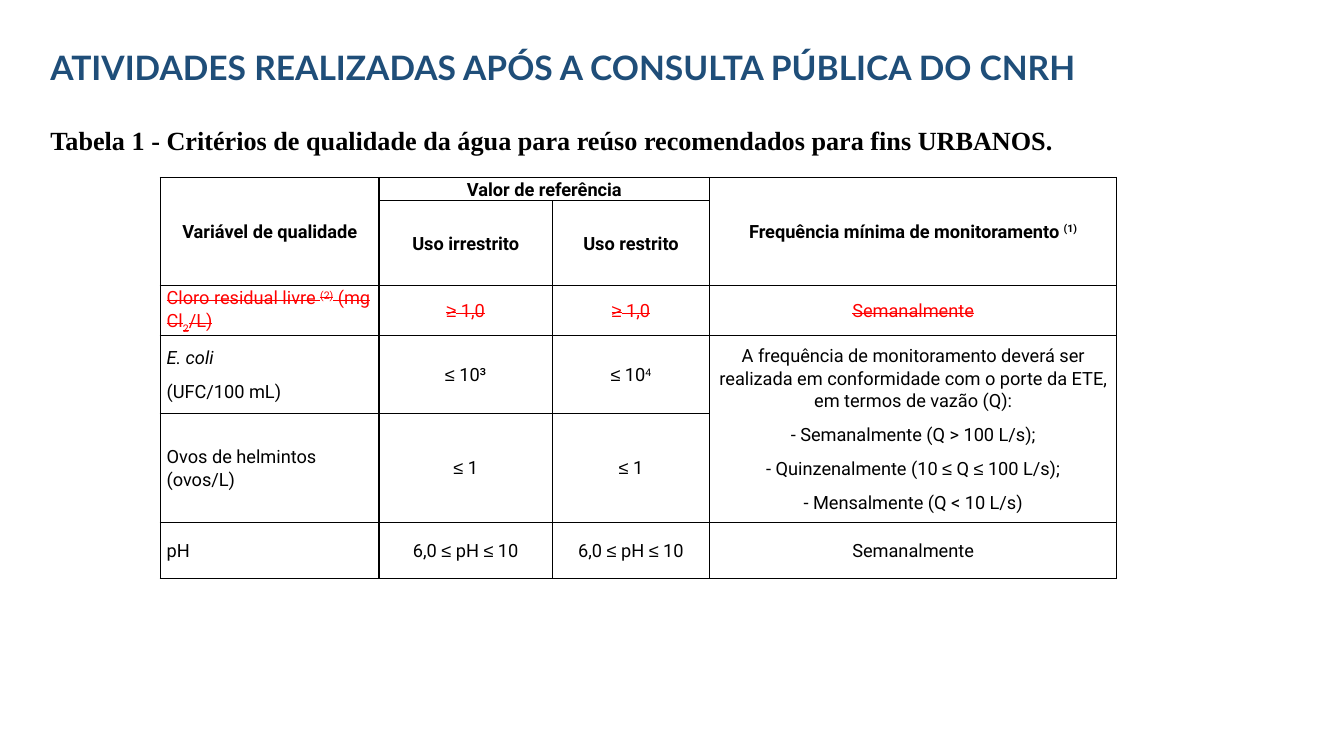
"""Build the slide with the water reuse quality criteria for urban purposes."""
from dataclasses import dataclass
from itertools import groupby
from typing import Any

from lxml import etree
from pptx import Presentation
from pptx.dml.color import RGBColor
from pptx.enum.text import MSO_ANCHOR, MSO_AUTO_SIZE, PP_ALIGN
from pptx.oxml.ns import qn
from pptx.util import Cm, Pt

LEFT, CENTER, JUSTIFY = PP_ALIGN.LEFT, PP_ALIGN.CENTER, PP_ALIGN.JUSTIFY
MIDDLE = MSO_ANCHOR.MIDDLE
FIT_SHAPE = MSO_AUTO_SIZE.SHAPE_TO_FIT_TEXT


@dataclass(frozen=True)
class Theme:
    title_color: str = "1F4E79"
    text_color: str = "000000"
    removed_color: str = "FF0000"
    title_font: str = "Lato"
    caption_font: str = "Times New Roman"
    table_font: str = "Roboto"
    symbol_font: str = "Arial"
    title_size: float = 24
    caption_size: float = 18.7
    table_size: float = 13
    border_width: float = 1


@dataclass(frozen=True)
class Piece:
    text: str
    baseline: int = 0
    italic: bool = False


@dataclass(frozen=True)
class Entry:
    row: int
    column: int
    paragraphs: list[list[Piece]]
    bold: bool = False
    removed: bool = False
    row_span: int = 1
    column_span: int = 1


@dataclass(frozen=True)
class Heading:
    text: str
    top: float
    width: float
    height: float
    font: dict[str, Any]
    color: str
    paragraph: dict[str, Any]


THEME = Theme()
SYMBOLS = "≤≥"
HEADING_LEFT = 1.02
TABLE_LEFT, TABLE_TOP = 4.04, 4.47
COLUMN_WIDTHS = [5.51, 4.37, 3.96, 10.26]
ROW_HEIGHTS = [0.58, 2.13, 1.27, 1.96, 2.74, 1.42]
CELL_FORMAT = {
    "margin_left": Cm(0.16), "margin_right": Cm(0.16),
    "margin_top": 0, "margin_bottom": 0, "vertical_anchor": MIDDLE,
}
TABLE_FLAGS = {"first_row": False, "horz_banding": False}

HEADINGS = [
    Heading("Tabela 1 - Critérios de qualidade da água para reúso recomendados para fins URBANOS.",
            2.95, 32, 1.07,
            {"name": THEME.caption_font, "size": Pt(THEME.caption_size), "bold": True},
            THEME.text_color,
            {"alignment": JUSTIFY, "line_spacing": 1.07, "space_after": Pt(10.7)}),
    Heading("ATIVIDADES REALIZADAS APÓS A CONSULTA PÚBLICA DO CNRH",
            1.07, 27.81, 1.27,
            {"name": THEME.title_font, "size": Pt(THEME.title_size), "bold": True},
            THEME.title_color, {"alignment": LEFT}),
]


def plain(*lines: str) -> list[list[Piece]]:
    """Turn each line into a paragraph of one piece."""
    return [[Piece(line)] for line in lines]


FREQUENCY_RULES = plain(
    "A frequência de monitoramento deverá ser realizada em conformidade com o porte da ETE, "
    "em termos de vazão (Q):",
    "- Semanalmente (Q > 100 L/s);",
    "- Quinzenalmente (10 ≤ Q ≤ 100 L/s);",
    "- Mensalmente (Q < 10 L/s)",
)
CHLORINE = [[Piece("Cloro residual livre "), Piece("(2)", 30), Piece(" (mg Cl"),
             Piece("2", -25), Piece("/L)")]]
ENTRIES = [
    Entry(0, 0, plain("Variável de qualidade"), bold=True, row_span=2),
    Entry(0, 1, plain("Valor de referência"), bold=True, column_span=2),
    Entry(0, 3, [[Piece("Frequência mínima de monitoramento "), Piece("(1)", 30)]],
          bold=True, row_span=2),
    Entry(1, 1, plain("Uso irrestrito"), bold=True),
    Entry(1, 2, plain("Uso restrito"), bold=True),
    Entry(2, 0, CHLORINE, removed=True),
    Entry(2, 1, plain("≥ 1,0"), removed=True),
    Entry(2, 2, plain("≥ 1,0"), removed=True),
    Entry(2, 3, plain("Semanalmente"), removed=True),
    Entry(3, 0, [[Piece("E. coli", italic=True)], [Piece("(UFC/100 mL)")]]),
    Entry(3, 1, plain("≤ 10³")),
    Entry(3, 2, [[Piece("≤ 10"), Piece("4", 30)]]),
    Entry(3, 3, FREQUENCY_RULES, row_span=2),
    Entry(4, 0, plain("Ovos de helmintos (ovos/L)")),
    Entry(4, 1, plain("≤ 1")),
    Entry(4, 2, plain("≤ 1")),
    Entry(5, 0, plain("pH")),
    Entry(5, 1, plain("6,0 ≤ pH ≤ 10")),
    Entry(5, 2, plain("6,0 ≤ pH ≤ 10")),
    Entry(5, 3, plain("Semanalmente")),
]


def apply_format(target: Any, values: dict[str, Any]) -> None:
    """Set every attribute named in the format values."""
    for name, value in values.items():
        setattr(target, name, value)


def add_run(paragraph: Any, text: str, font: dict[str, Any], color: str) -> Any:
    """Append a formatted run to a paragraph."""
    run = paragraph.add_run()
    run.text = text
    apply_format(run.font, font)
    run.font.color.rgb = RGBColor.from_string(color)
    return run


def add_heading(slide: Any, heading: Heading) -> None:
    """Draw one line of text above the table."""
    shape = slide.shapes.add_textbox(
        Cm(HEADING_LEFT), Cm(heading.top), Cm(heading.width), Cm(heading.height))
    apply_format(shape.text_frame, {"word_wrap": True, "auto_size": FIT_SHAPE})
    paragraph = shape.text_frame.paragraphs[0]
    apply_format(paragraph, heading.paragraph)
    add_run(paragraph, heading.text, heading.font, heading.color)


def add_piece(paragraph: Any, piece: Piece, entry: Entry) -> None:
    """Write a piece of cell text, giving comparison signs their own font."""
    color = THEME.removed_color if entry.removed else THEME.text_color
    for is_symbol, characters in groupby(piece.text, lambda character: character in SYMBOLS):
        font = {"name": THEME.symbol_font if is_symbol else THEME.table_font,
                "size": Pt(THEME.table_size), "bold": entry.bold, "italic": piece.italic}
        run = add_run(paragraph, "".join(characters), font, color)
        properties = run._r.get_or_add_rPr()
        if entry.removed:
            properties.set("strike", "sngStrike")
        if piece.baseline:
            properties.set("baseline", str(piece.baseline * 1000))


def style_cell(cell: Any) -> None:
    """Give a cell its margins, empty fill and four borders."""
    apply_format(cell, CELL_FORMAT)
    cell.fill.background()
    properties = cell._tc.get_or_add_tcPr()
    for position, side in enumerate(("lnL", "lnR", "lnT", "lnB")):
        line = etree.Element(qn(f"a:{side}"), w=str(Pt(THEME.border_width)))
        fill = etree.SubElement(line, qn("a:solidFill"))
        etree.SubElement(fill, qn("a:srgbClr"), val=THEME.text_color)
        properties.insert(position, line)


def fill_entry(table: Any, entry: Entry) -> None:
    """Merge the cells of an entry and write its paragraphs."""
    cell = table.cell(entry.row, entry.column)
    if entry.row_span > 1 or entry.column_span > 1:
        cell.merge(table.cell(entry.row + entry.row_span - 1,
                              entry.column + entry.column_span - 1))
    is_label = entry.column == 0 and not entry.bold
    for index, pieces in enumerate(entry.paragraphs):
        frame = cell.text_frame
        paragraph = frame.add_paragraph() if index else frame.paragraphs[0]
        apply_format(paragraph, {"alignment": LEFT if is_label else CENTER,
                                 "line_spacing": 1.07, "space_after": Pt(8)})
        for piece in pieces:
            add_piece(paragraph, piece, entry)


def add_criteria_table(slide: Any) -> None:
    """Draw the table of quality criteria."""
    table = slide.shapes.add_table(
        len(ROW_HEIGHTS), len(COLUMN_WIDTHS), Cm(TABLE_LEFT), Cm(TABLE_TOP),
        Cm(sum(COLUMN_WIDTHS)), Cm(sum(ROW_HEIGHTS))).table
    apply_format(table, TABLE_FLAGS)
    for column, width in zip(table.columns, COLUMN_WIDTHS):
        column.width = Cm(width)
    for row, height in zip(table.rows, ROW_HEIGHTS):
        row.height = Cm(height)
    for cell in table.iter_cells():
        style_cell(cell)
    for entry in ENTRIES:
        fill_entry(table, entry)


def main() -> None:
    """Create the presentation and save it."""
    presentation = Presentation()
    apply_format(presentation, {"slide_width": Cm(33.87), "slide_height": Cm(19.05)})
    slide = presentation.slides.add_slide(presentation.slide_layouts[6])
    for heading in HEADINGS:
        add_heading(slide, heading)
    add_criteria_table(slide)
    presentation.save("out.pptx")


if __name__ == "__main__":
    main()
